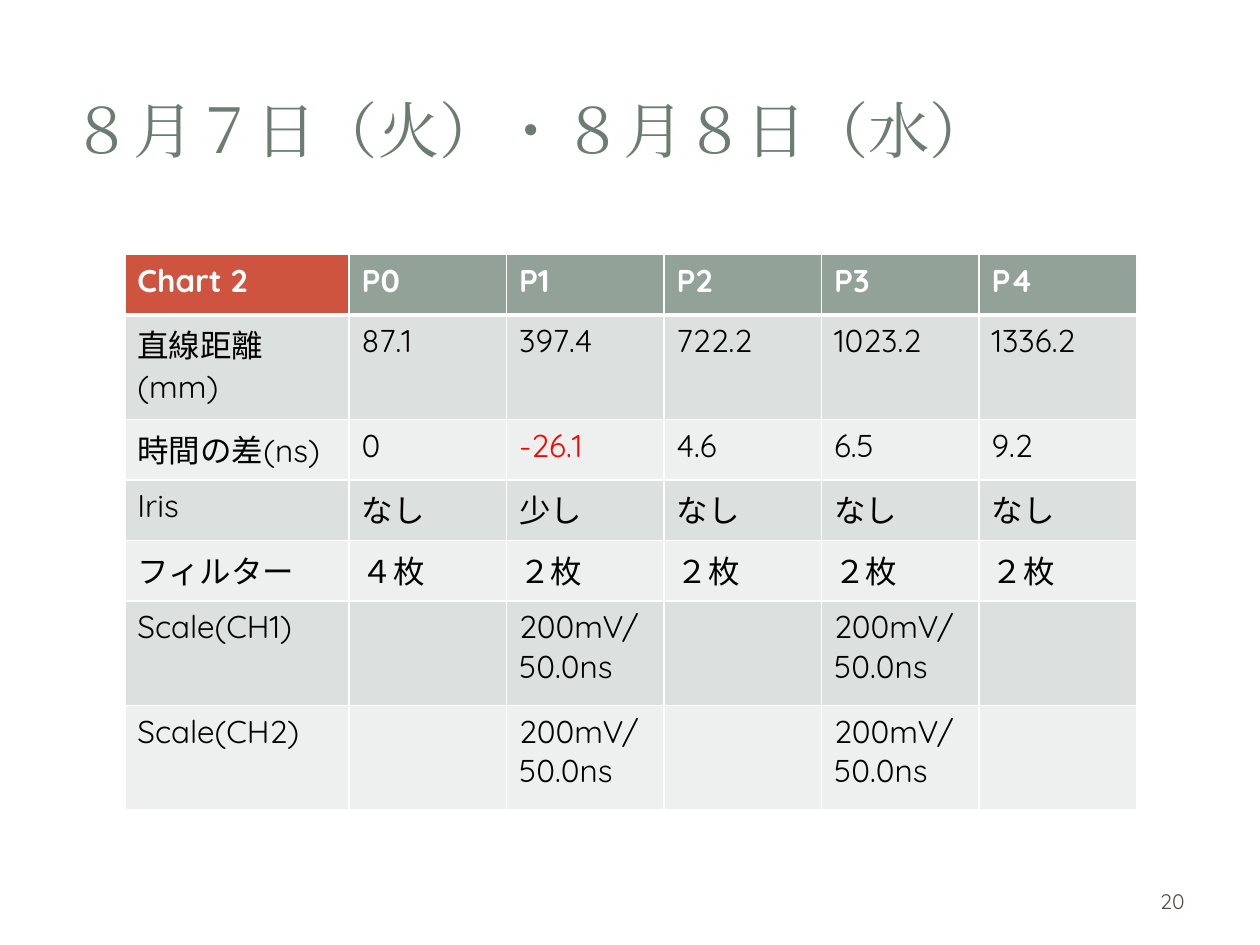
"""Build the slide with the 7-8 August measurement table."""
from lxml.etree import SubElement
from pptx import Presentation
from pptx.dml.color import RGBColor as RGB
from pptx.enum.shapes import MSO_SHAPE as SHAPE
from pptx.enum.text import MSO_ANCHOR as ANCHOR, MSO_AUTO_SIZE as AUTO, PP_ALIGN as ALIGN
from pptx.oxml import parse_xml
from pptx.oxml.ns import nsdecls, qn
from pptx.util import Inches, Pt

TITLE = "８月７日（火）・８月８日（水）"
PAGE = "20"
SCALES = ["", "200mV/50.0ns", "", "200mV/50.0ns", ""]
ROWS = [
    ["Chart 2", "P0", "P1", "P2", "P3", "P4"],
    ["直線距離(mm)", "87.1", "397.4", "722.2", "1023.2", "1336.2"],
    ["時間の差(ns)", "0", "-26.1", "4.6", "6.5", "9.2"],
    ["Iris", "なし", "少し", "なし", "なし", "なし"],
    ["フィルター", "４枚", "２枚", "２枚", "２枚", "２枚"],
    ["Scale(CH1)", *SCALES],
    ["Scale(CH2)", *SCALES],
]
COLORS = {
    "title": "6B7D72", "page": "564B3C", "corner": "CF543F", "header": "93A299",
    "odd": "DCE0DE", "even": "EEF0EF", "white": "FFFFFF", "text": "000000",
    "negative": "FF0000",
}
PANELS = [
    (SHAPE.ROUNDED_RECTANGLE, (0.1, 0.11, 9.8, 7.29), 100),
    (SHAPE.RECTANGLE, (0.3, 0.3, 9.4, 1.45), 83),
    (SHAPE.RECTANGLE, (0.41, 0.41, 9.17, 1.22), 100),
]
CORNER = 0.02
COL_WIDTHS = [1.78] + [1.25] * 5
LOW, TALL = 0.48, 0.83
ROW_HEIGHTS = [LOW, TALL, LOW, LOW, LOW, TALL, TALL]
BORDERS = {"lnL": 1, "lnR": 1, "lnT": 1, "lnB": 1}
TITLE_BOX = (0.47, 0.45, 9.03, 1.14)
TABLE_AT = (0.99, 2.02)
PAGE_BOX = (7.17, 6.95, 2.33, 0.4)


def color(name):
    return RGB.from_string(COLORS[name])


def write(tf, text, color_name, align=ALIGN.LEFT, **fmt):
    p = tf.paragraphs[0]
    p.alignment = align
    r = p.add_run()
    r.text = text
    for key, value in fmt.items():
        setattr(r.font, key, value)
    r.font.color.rgb = color(color_name)
    return r


def add_panels(s):
    for index, (kind, box, opacity) in enumerate(PANELS):
        sp = s.shapes.add_shape(kind, *map(Inches, box))
        sp.shadow.inherit = False
        sp.line.fill.background()
        sp.fill.solid()
        sp.fill.fore_color.rgb = color("white")
        if kind == SHAPE.ROUNDED_RECTANGLE:
            sp.adjustments[0] = CORNER
        if opacity < 100:
            tint = sp._element.spPr.find(".//" + qn("a:srgbClr"))
            SubElement(tint, qn("a:alpha"), val=str(opacity * 1000))
        s.shapes._spTree.insert(2 + index, sp._element)


def add_title(s):
    sp = s.shapes.title
    sp.left, sp.top, sp.width, sp.height = map(Inches, TITLE_BOX)
    tf = sp.text_frame
    tf.auto_size, tf.vertical_anchor = AUTO.NONE, ANCHOR.MIDDLE
    r = write(tf, TITLE, "title", size=Pt(35), name="Cambria")
    SubElement(r._r.get_or_add_rPr(), qn("a:ea"), typeface="Cambria")


def set_borders(cell, widths):
    tcPr = cell._tc.get_or_add_tcPr()
    for index, (side, width) in enumerate(widths.items()):
        tcPr.insert(index, parse_xml(
            f'<a:{side} {nsdecls("a")} w="{Pt(width)}"><a:solidFill>'
            f'<a:srgbClr val="{COLORS["white"]}"/></a:solidFill></a:{side}>'))


def cell_colors(row, col, text):
    if row == 0:
        return ("header" if col else "corner"), "white"
    return ("odd" if row % 2 else "even"), ("negative" if text.startswith("-") else "text")


def add_measurements(s):
    box = map(Inches, (*TABLE_AT, sum(COL_WIDTHS), sum(ROW_HEIGHTS)))
    table = s.shapes.add_table(len(ROWS), len(COL_WIDTHS), *box).table
    for column, width in zip(table.columns, COL_WIDTHS):
        column.width = Inches(width)
    for row, height in zip(table.rows, ROW_HEIGHTS):
        row.height = Inches(height)
    for i, values in enumerate(ROWS):
        edges = {0: {"lnB": 3}, 1: {"lnT": 3}}.get(i, {})
        for j, text in enumerate(values):
            cell = table.cell(i, j)
            fill, ink = cell_colors(i, j, text)
            cell.fill.solid()
            cell.fill.fore_color.rgb = color(fill)
            set_borders(cell, {**BORDERS, **edges})
            if text:
                write(cell.text_frame, text, ink, size=Pt(18), name="Quicksand", bold=i == 0)


def add_page_number(s):
    tf = s.shapes.add_textbox(*map(Inches, PAGE_BOX)).text_frame
    tf.word_wrap, tf.vertical_anchor = True, ANCHOR.MIDDLE
    write(tf, PAGE, "page", ALIGN.RIGHT, size=Pt(12), name="Quicksand")


def main():
    prs = Presentation()
    prs.slide_width, prs.slide_height = Inches(10), Inches(7.5)
    s = prs.slides.add_slide(prs.slide_layouts[5])
    add_panels(s)
    add_title(s)
    add_measurements(s)
    add_page_number(s)
    prs.save("out.pptx")


if __name__ == "__main__":
    main()
